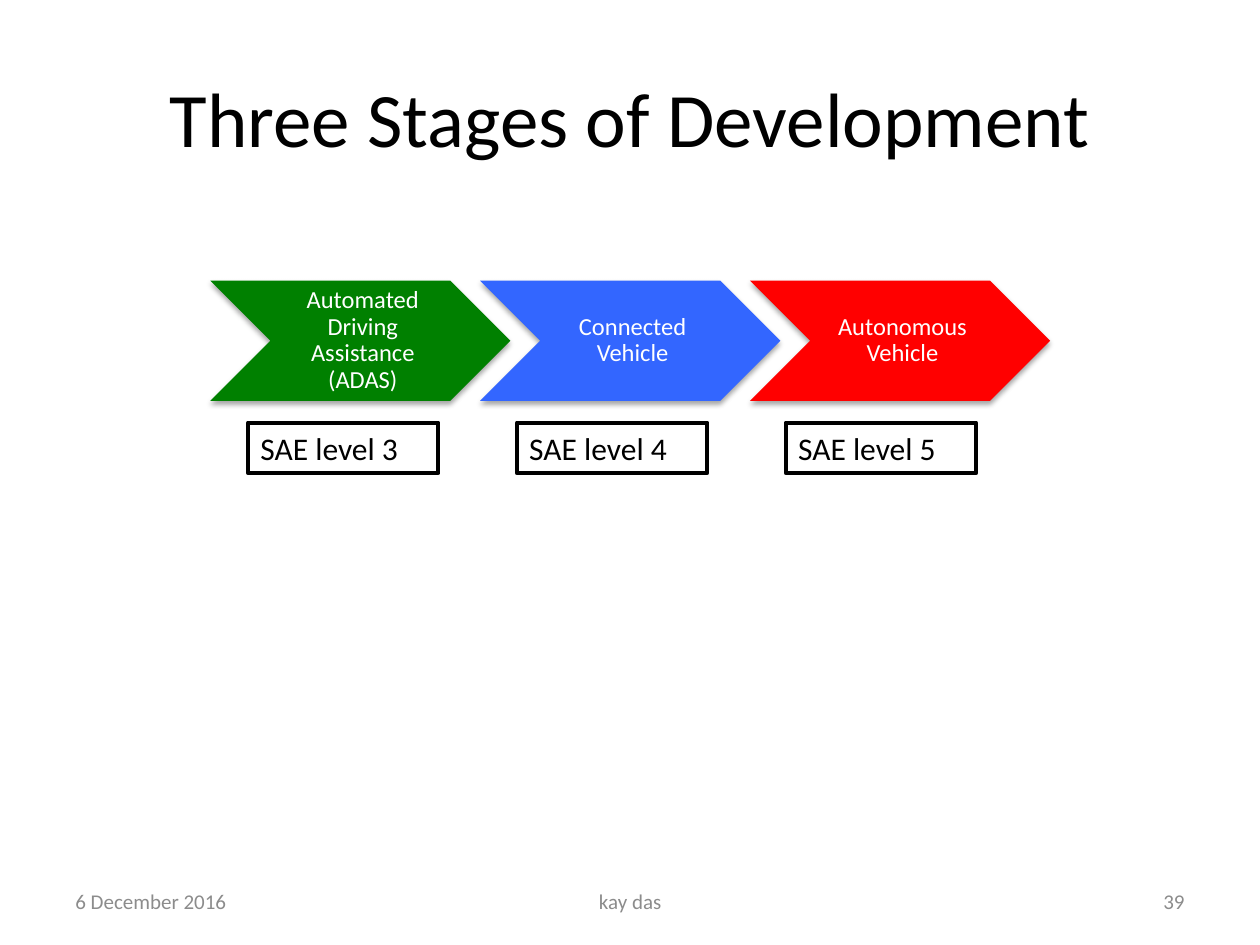
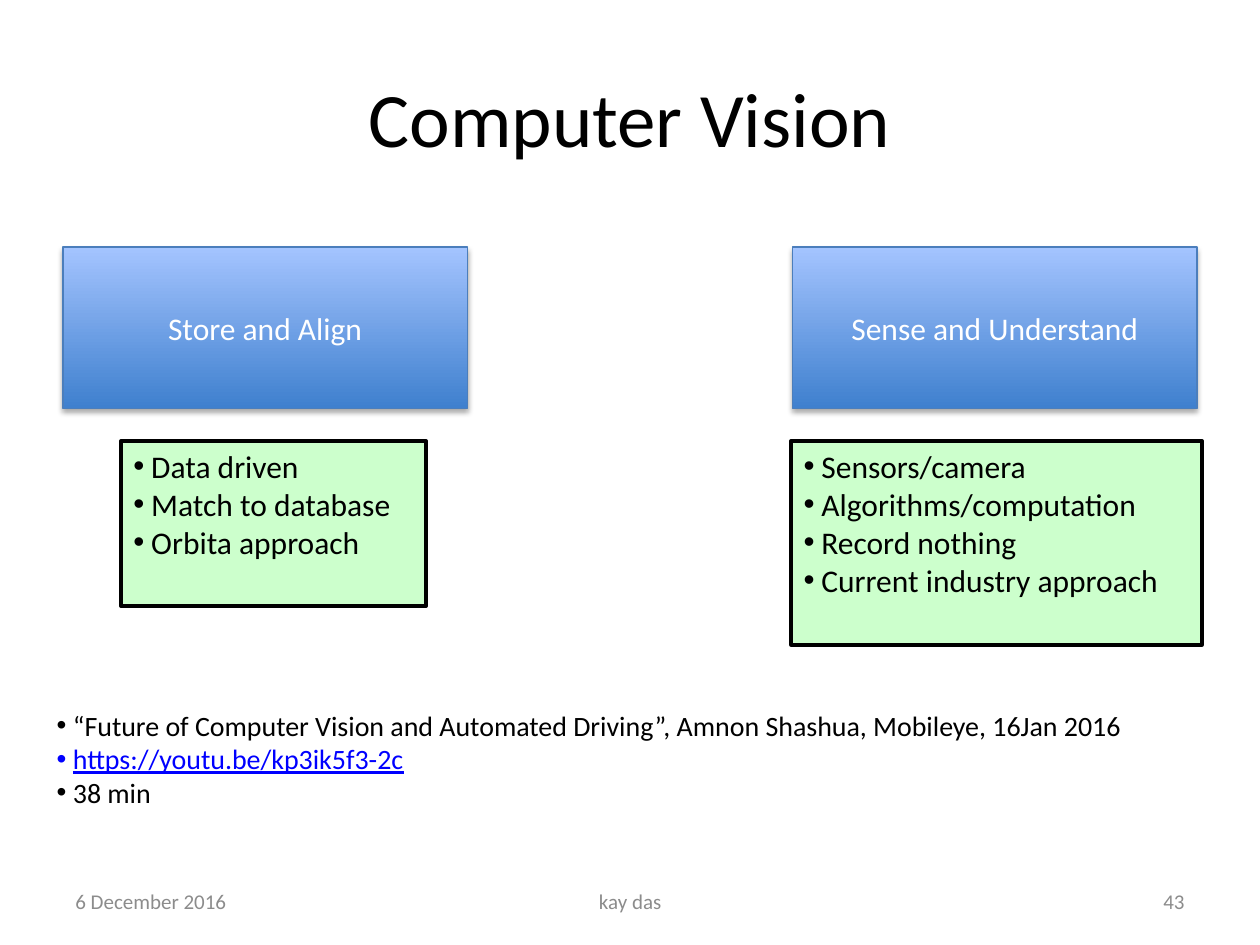
from lxml import etree
from pptx import Presentation
from pptx.dml.color import RGBColor
from pptx.enum.shapes import MSO_SHAPE as Shape
from pptx.enum.text import MSO_ANCHOR as Anchor, PP_ALIGN as Align
from pptx.oxml.ns import qn
from pptx.util import Cm, Pt

BLACK = RGBColor(0x00, 0x00, 0x00)
WHITE = RGBColor(0xFF, 0xFF, 0xFF)
GREY = RGBColor(0x8C, 0x8C, 0x8C)
GREEN = RGBColor(0x00, 0x80, 0x00)
BLUE = RGBColor(0x33, 0x66, 0xFF)
RED = RGBColor(0xFF, 0x00, 0x00)
LIGHT_GREEN = RGBColor(0xCC, 0xFF, 0xCC)
GRADIENT_LOW = RGBColor(0x3F, 0x80, 0xCE)
GRADIENT_HIGH = RGBColor(0xA4, 0xC4, 0xFF)
CARD_EDGE = RGBColor(0x4B, 0x7E, 0xBC)
LINK = RGBColor(0x00, 0x00, 0xFF)


class Deck:
    """Holds the style and the current slide."""

    font = "Calibri"
    date = "6 December 2016"
    author = "kay das"

    def __init__(self):
        self.presentation = Presentation()
        self.presentation.slide_width = Cm(25.4)
        self.presentation.slide_height = Cm(19.05)
        self.slide = None

    def new_slide(self, title, number):
        layout = self.presentation.slide_layouts[6]
        self.slide = self.presentation.slides.add_slide(layout)
        self.text((1.27, 0.76, 22.86, 3.18), [title], 44, align=Align.CENTER)
        # Footer: date, author, slide number
        for left, width, words, align in (
            (1.27, 5.93, self.date, Align.LEFT),
            (8.68, 8.05, self.author, Align.CENTER),
            (18.2, 5.93, str(number), Align.RIGHT),
        ):
            self.text((left, 17.65, width, 1.02), [words], 12, GREY, align)

    def fill_text(self, shape, lines, size, color=BLACK, align=Align.LEFT,
                  anchor=Anchor.MIDDLE, bullet_indent=None):
        frame = shape.text_frame
        frame.word_wrap = True
        frame.vertical_anchor = anchor
        for index, line in enumerate(lines):
            paragraph = frame.paragraphs[0] if index == 0 else frame.add_paragraph()
            paragraph.text = line
            paragraph.alignment = align
            if bullet_indent:
                self.bullet(paragraph, bullet_indent)
            font = paragraph.font
            font.name, font.size, font.color.rgb = self.font, Pt(size), color
        return frame

    def bullet(self, paragraph, indent):
        properties = paragraph._p.get_or_add_pPr()
        properties.set("marL", str(Cm(indent)))
        properties.set("indent", str(-Cm(indent)))
        etree.SubElement(properties, qn("a:buFont"), typeface="Arial")
        etree.SubElement(properties, qn("a:buChar"), char="•")

    def text(self, box, lines, size, color=BLACK, align=Align.LEFT,
             anchor=Anchor.MIDDLE, bullet_indent=None):
        shape = self.slide.shapes.add_textbox(*map(Cm, box))
        return self.fill_text(shape, lines, size, color, align, anchor, bullet_indent)

    def shape(self, kind, box, fill=None, line=None, line_width=2.25):
        shape = self.slide.shapes.add_shape(kind, *map(Cm, box))
        shape.shadow.inherit = False
        if fill is None:
            shape.fill.background()
        else:
            shape.fill.solid()
            shape.fill.fore_color.rgb = fill
        if line is None:
            shape.line.fill.background()
        else:
            shape.line.color.rgb = line
            shape.line.width = Pt(line_width)
        return shape

    def drop_shadow(self, shape):
        effects = shape._element.spPr.find(qn("a:effectLst"))
        shadow = etree.SubElement(
            effects, qn("a:outerShdw"), blurRad=str(Pt(3.1)), dist=str(Pt(1.8)),
            dir="5400000", rotWithShape="0")
        color = etree.SubElement(shadow, qn("a:srgbClr"), val="000000")
        etree.SubElement(color, qn("a:alpha"), val="35000")

    def chevron(self, box, words, fill):
        shape = self.shape(Shape.CHEVRON, box, fill)
        self.drop_shadow(shape)
        frame = self.fill_text(shape, [words], 14, WHITE, Align.CENTER)
        frame.margin_left = Cm(0.15)
        frame.margin_right = frame.margin_top = frame.margin_bottom = Cm(0.05)
        frame.paragraphs[0].line_spacing = 0.9

    def card(self, box, words):
        shape = self.shape(Shape.RECTANGLE, box, GRADIENT_LOW, CARD_EDGE, 0.75)
        shape.fill.gradient()
        shape.fill.gradient_angle = 90
        for stop, color in zip(shape.fill.gradient_stops, (GRADIENT_LOW, GRADIENT_HIGH)):
            stop.color.rgb = color
        self.drop_shadow(shape)
        self.fill_text(shape, [words], 18, WHITE, Align.CENTER)

    def framed(self, box, lines, fill=None, bullet_indent=None):
        shape = self.shape(Shape.RECTANGLE, box, fill, BLACK)
        self.fill_text(shape, lines, 18, anchor=Anchor.TOP, bullet_indent=bullet_indent)


def stages_slide(deck):
    deck.new_slide("Three Stages of Development", 39)
    stages = (
        ("Automated Driving Assistance (ADAS)", GREEN),
        ("Connected Vehicle", BLUE),
        ("Autonomous Vehicle", RED),
    )
    for index, (stage, color) in enumerate(stages):
        deck.chevron((4.24 + 5.44 * index, 5.66, 6.05, 2.42), stage, color)
        deck.framed((5 + 5.42 * index, 8.52, 3.84, 1.02), [f"SAE level {index + 3}"])


def vision_slide(deck):
    deck.new_slide("Computer Vision", 43)
    # Two approaches, each with its traits below
    approaches = (
        (1.27, "Store and Align", (2.44, 8.89, 6.15, 3.33),
         ["Data driven", "Match to database", "Orbita approach"]),
        (15.98, "Sense and Understand", (15.95, 8.89, 8.28, 4.11),
         ["Sensors/camera", "Algorithms/computation", "Record nothing",
          "Current industry approach"]),
    )
    for left, approach, traits_box, traits in approaches:
        deck.card((left, 4.98, 8.15, 3.25), approach)
        deck.framed(traits_box, traits, LIGHT_GREEN, bullet_indent=0.36)

    # Reference
    reference = deck.text(
        (0.89, 14.15, 23.98, 3),
        ["“Future of Computer Vision and Automated Driving”, Amnon Shashua, "
         "Mobileye, 16Jan 2016",
         "https://youtu.be/kp3ik5f3-2c",
         "38 min"],
        16, anchor=Anchor.TOP, bullet_indent=0.33)
    address = reference.paragraphs[1].runs[0].font
    address.color.rgb = LINK
    address.underline = True


def main():
    deck = Deck()
    stages_slide(deck)
    vision_slide(deck)
    deck.presentation.save("out.pptx")


if __name__ == "__main__":
    main()
